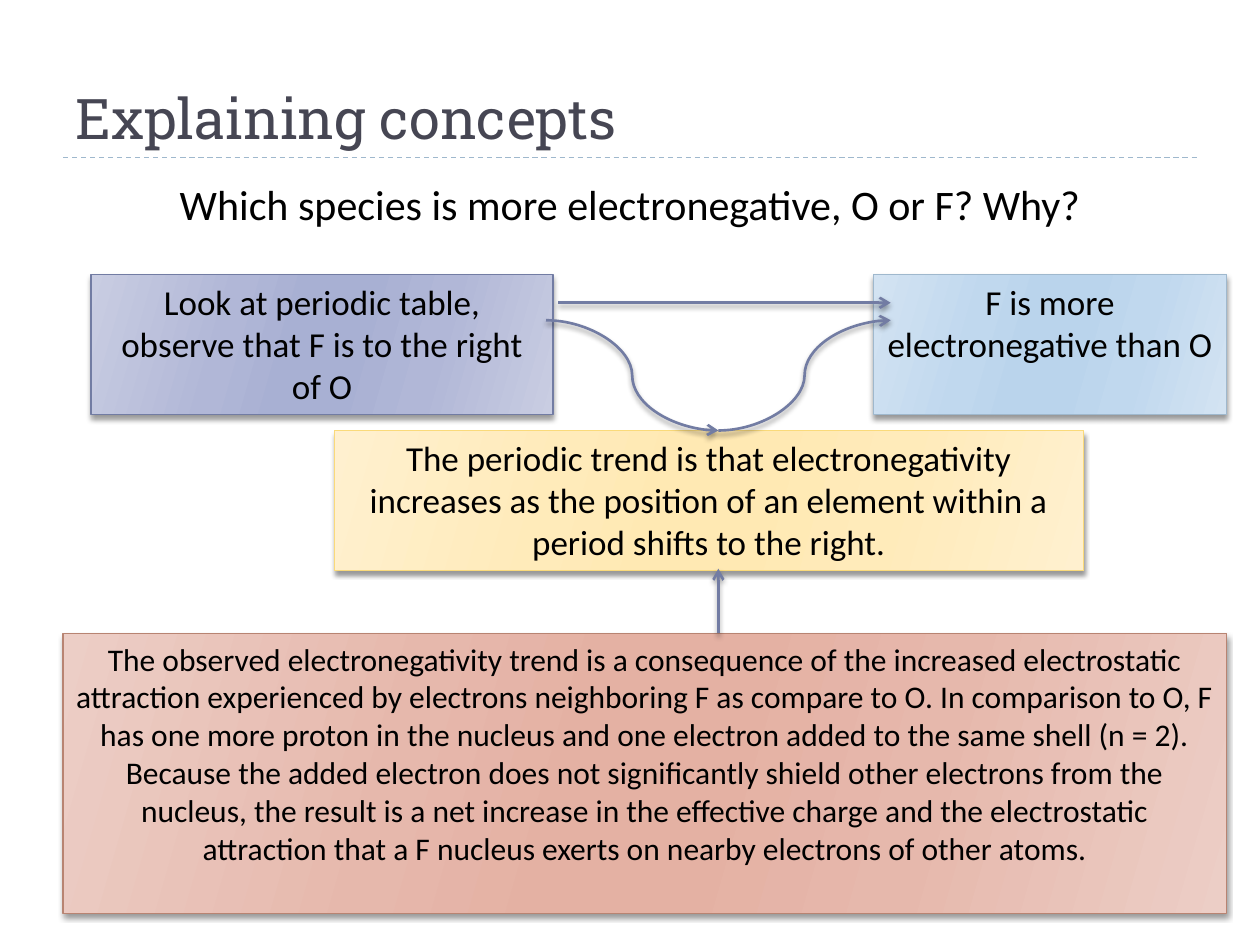
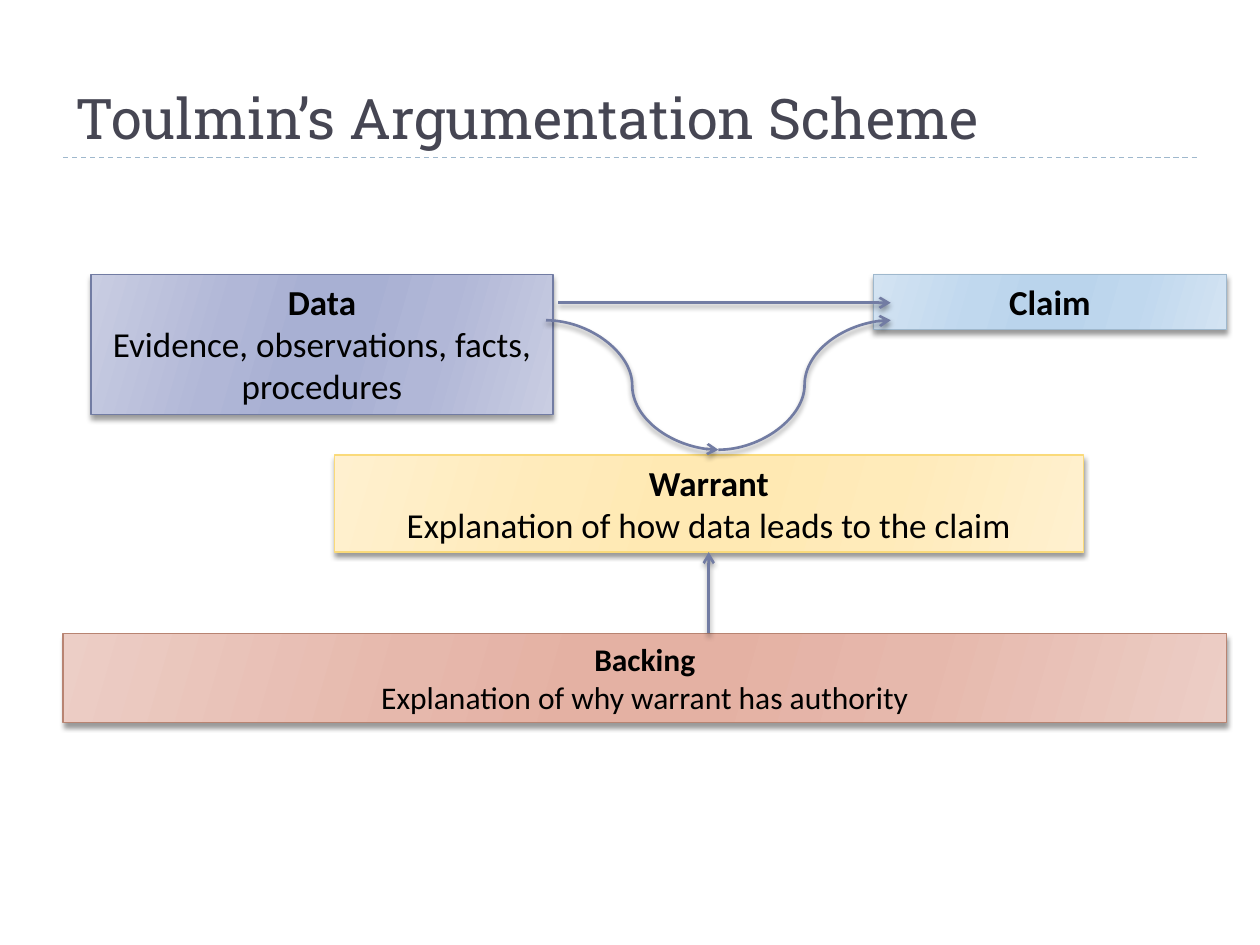
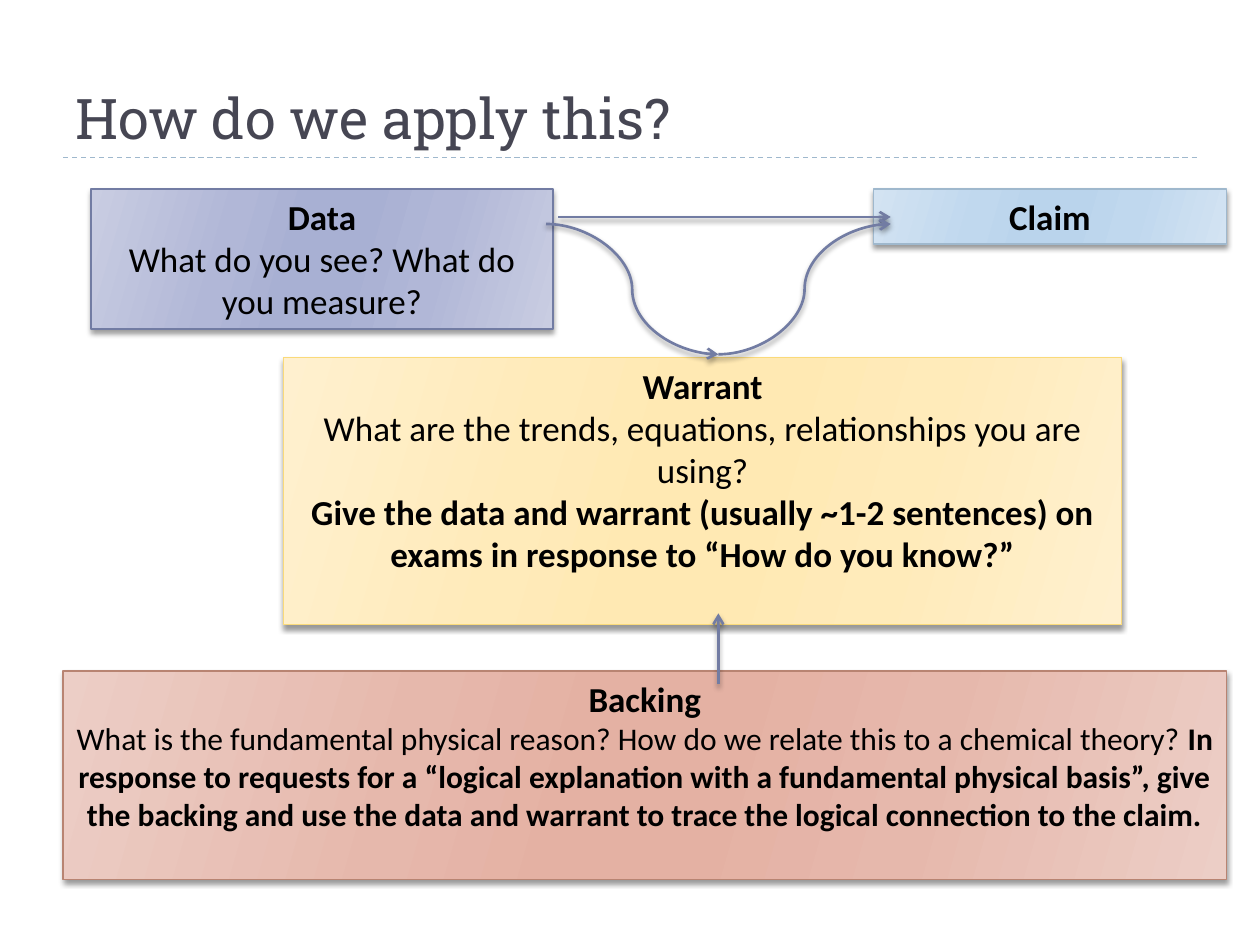
import pptx
import pptx.util
import pptx.dml.color
import pptx.enum.dml
import pptx.enum.shapes
import pptx.enum.text
import pptx.oxml
import pptx.oxml.ns

Pt = pptx.util.Pt
Shape = pptx.enum.shapes.MSO_SHAPE
Link = pptx.enum.shapes.MSO_CONNECTOR
Align = pptx.enum.text.PP_ALIGN
Anchor = pptx.enum.text.MSO_ANCHOR
Fit = pptx.enum.text.MSO_AUTO_SIZE

HEX = {"title": "464653", "text": "000000", "rule": "9FB8CD", "arrow": "727CA3"}
# edge line, then gradient shades from the sides to the middle
TONES = {
    "data": ("727CA3", "C9CDE2", "B1B7D7", "A8B0D3"),
    "claim": ("9FB8CD", "D3E3F2", "C0D8EE", "BAD4EC"),
    "warrant": ("FADA7A", "FFF0CF", "FFEBBA", "FFE9B3"),
    "backing": ("B88472", "ECCEC6", "E6B8AC", "E4B1A3"),
}
STOPS = ((0, 1), (30, 2), (45, 3), (55, 3), (73, 2), (100, 1))
SPANS = {"data": (52, 264), "claim": (499, 202), "warrant": (191, 428),
         "backing": (36, 665)}
LEFT, MID, RIGHT = 312, 410.5, 509  # where the curved arrows start, meet and end

# Boxes: top, height, paragraphs (size, runs (text, bold)); optional own span.
# Arrows: curve start and low point; rise x, start and end.
SLIDES = [
    {
        "title": "Explaining concepts",
        "ask": "Which species is more electronegative, O or F? Why?",
        "boxes": {
            "warrant": (246, 80, [(20, [(
                "The periodic trend is that electronegativity increases as the "
                "position of an element within a period shifts to the right.", False)])]),
            "data": (157, 80, [(20, [(
                "Look at periodic table, observe that F is to the right of O", False)])]),
            "claim": (157, 80, [(20, [("F is more electronegative than O", False)])]),
            "backing": (362, 160, [(18, [(
                "The observed electronegativity trend is a consequence of the increased "
                "electrostatic attraction experienced by electrons neighboring F as "
                "compare to O. In comparison to O, F has one more proton in the nucleus "
                "and one electron added to the same shell (n = 2). Because the added "
                "electron does not significantly shield other electrons from the "
                "nucleus, the result is a net increase in the effective charge and the "
                "electrostatic attraction that a F nucleus exerts on nearby electrons "
                "of other atoms.", False)])]),
        },
        "curve": (183, 246),
        "rise": (MID, 362, 325),
    },
    {
        "title": "Toulmin’s Argumentation Scheme",
        "boxes": {
            "warrant": (260, 55.5, [
                (20, [("Warrant", True)]),
                (20, [("Explanation of how data leads to the claim", False)])]),
            "data": (157, 80, [
                (20, [("Data", True)]),
                (20, [("Evidence, observations, facts, procedures", False)])]),
            "claim": (157, 31.5, [(20, [("Claim", True)])]),
            "backing": (362, 51, [
                (18, [("Backing", True)]),
                (18, [("Explanation of why warrant has authority", False)])]),
        },
        "curve": (183, 257),
        "rise": (405, 362, 315.5),
    },
    {
        "title": "How do we apply this?",
        "spans": {"warrant": (162, 479)},
        "boxes": {
            "warrant": (204.5, 152.5, [
                (20, [("Warrant", True)]),
                (20, [("What are the trends, equations, relationships you are using?",
                       False)]),
                (20, [("Give the data and warrant (usually ~1-2 sentences) on exams in "
                       "response to “How do you know?”", True)])]),
            "data": (108, 80, [
                (20, [("Data", True)]),
                (20, [("What do you see? What do you measure?", False)])]),
            "claim": (108, 31.5, [(20, [("Claim", True)])]),
            "backing": (383.5, 119, [
                (20, [("Backing", True)]),
                (18, [("What is the fundamental physical reason? How do we relate this "
                       "to a chemical theory? ", False),
                      ("In response to requests for a “logical explanation with a "
                       "fundamental physical basis”, give the backing and use the data "
                       "and warrant to trace the logical connection to the claim.",
                       True)])]),
        },
        "curve": (128, 202.5),
        "rise": (MID, 391, 350.5),
    },
]


def rgb(code):
    return pptx.dml.color.RGBColor.from_string(code)


def node(tag, body="", attrs=""):
    space = pptx.oxml.ns.nsdecls("a")
    return pptx.oxml.parse_xml(f"<a:{tag} {space} {attrs}>{body}</a:{tag}>")


def cast(item, body=""):
    """Set the effect list; it must follow fill and line."""
    item.element.spPr.append(node("effectLst", body))


def drop(item):
    cast(item, f'<a:outerShdw blurRad="{Pt(3)}" dist="{Pt(2)}" dir="5400000" '
               'rotWithShape="0"><a:srgbClr val="000000"><a:alpha val="40000"/>'
               '</a:srgbClr></a:outerShdw>')


def style(para, face, size, code):
    para.font.name = face
    para.font.size = Pt(size)
    para.font.color.rgb = rgb(code)


def write(frame, paras):
    frame.word_wrap = True
    frame.auto_size = Fit.SHAPE_TO_FIT_TEXT
    frame.vertical_anchor = Anchor.TOP
    for i, (size, runs) in enumerate(paras):
        para = frame.add_paragraph() if i else frame.paragraphs[0]
        para.alignment = Align.CENTER
        style(para, "Calibri", size, HEX["text"])
        if len(runs) == 1:
            para.font.bold = runs[0][1]
        for text, bold in runs:
            run = para.add_run()
            run.text = text
            if len(runs) > 1:
                run.font.bold = bold


def box(slide, name, span, top, high, paras):
    left, wide = span
    item = slide.shapes.add_shape(Shape.RECTANGLE, Pt(left), Pt(top), Pt(wide), Pt(high))
    tones = TONES[name]
    stops = "".join(f'<a:gs pos="{pos * 1000}"><a:srgbClr val="{tones[i]}"/></a:gs>'
                    for pos, i in STOPS)
    grad = node("gradFill", f'<a:gsLst>{stops}</a:gsLst><a:lin ang="960000" scaled="0"/>',
                'rotWithShape="1"')
    item.element.spPr.append(grad)
    item.line.color.rgb = rgb(tones[0])
    item.line.width = Pt(0.75)
    drop(item)
    write(item.text_frame, paras)
    return item


def link(slide, kind, x1, y1, x2, y2, code, width):
    item = slide.shapes.add_connector(kind, Pt(x1), Pt(y1), Pt(x2), Pt(y2))
    item.line.color.rgb = rgb(code)
    item.line.width = Pt(width)
    return item


def arrow(slide, kind, *ends):
    item = link(slide, kind, *ends, HEX["arrow"], 1.5)
    item.line._get_or_add_ln().append(node("tailEnd", attrs='type="arrow"'))
    drop(item)
    return item


def head(slide, text):
    item = slide.shapes.title
    item.left, item.top, item.width, item.height = Pt(36), Pt(12), Pt(648), Pt(78)
    frame = item.text_frame
    frame.text = text
    frame.auto_size = Fit.NONE
    frame.vertical_anchor = Anchor.BOTTOM
    para = frame.paragraphs[0]
    para.alignment = Align.LEFT
    style(para, "Roboto Slab", 32, HEX["title"])


def rule(slide, layout):
    """Draw the line under the title and move it to the shared layout."""
    item = link(slide, Link.STRAIGHT, 36, 90, 684, 90, HEX["rule"], 0.75)
    item.line.dash_style = pptx.enum.dml.MSO_LINE.DASH
    cast(item)
    layout.shapes.element.append(item.element)


def build(slide, page):
    head(slide, page["title"])
    spans = SPANS | page.get("spans", {})
    boxes = {name: box(slide, name, spans[name], *rest)
             for name, rest in page["boxes"].items()}
    if "ask" in page:
        ask = slide.shapes.add_textbox(Pt(17), Pt(98.5), Pt(686), Pt(36))
        write(ask.text_frame, [(24, [(page["ask"], False)])])

    level = page["boxes"]["data"][0] + 16
    arrow(slide, Link.STRAIGHT, 319, level, RIGHT, level)
    high, low = page["curve"]
    arrow(slide, Link.CURVE, MID, low, RIGHT, high)
    arrow(slide, Link.CURVE, LEFT, high, MID, low)

    x, start, end = page["rise"]
    rise = arrow(slide, Link.STRAIGHT, x, start, x, end)
    left, wide = spans["warrant"]
    if x == left + wide / 2:
        rise.end_connect(boxes["warrant"], 2)


def main():
    deck = pptx.Presentation()
    deck.slide_width, deck.slide_height = Pt(720), Pt(540)
    layout = deck.slide_layouts[5]
    for i, page in enumerate(SLIDES):
        slide = deck.slides.add_slide(layout)
        if i == 0:
            rule(slide, layout)
        build(slide, page)
    deck.save("out.pptx")


if __name__ == "__main__":
    main()
